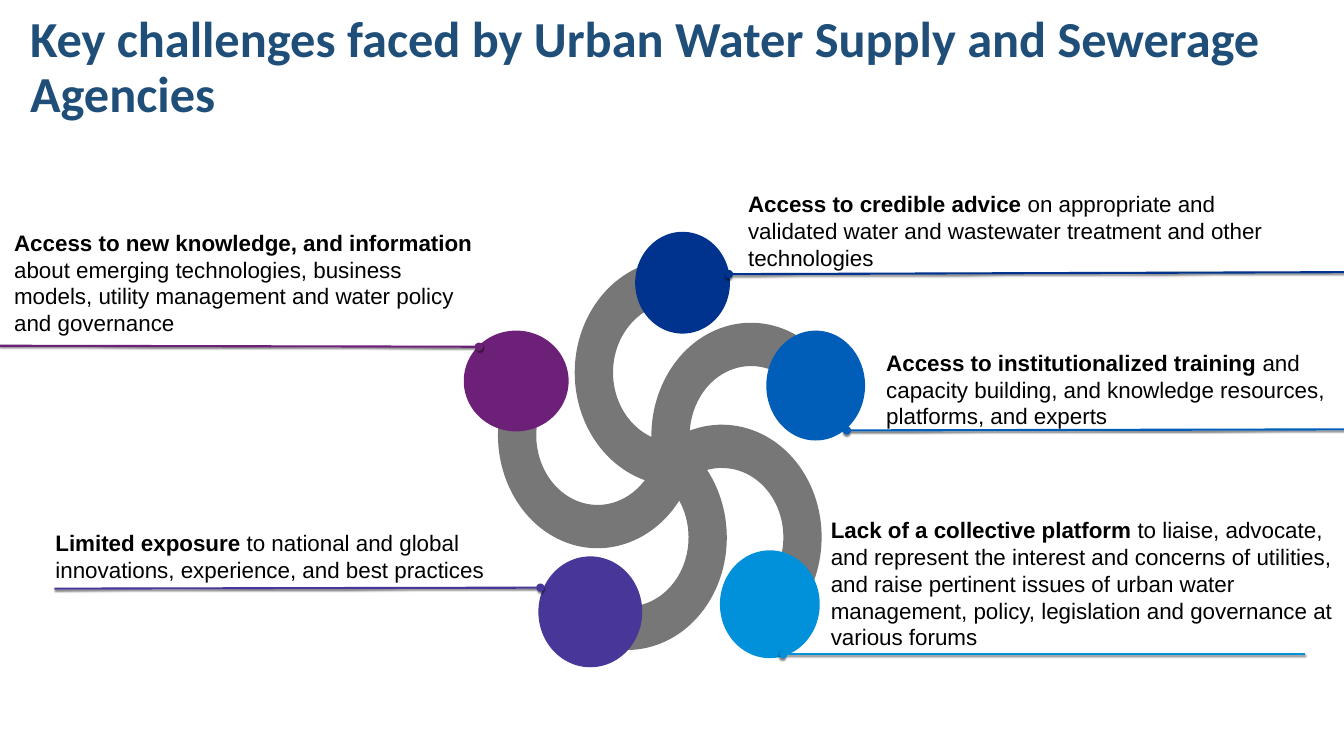
from dataclasses import dataclass
from math import cos, pi, sin

from lxml.etree import SubElement
from pptx import Presentation
from pptx.dml.color import RGBColor
from pptx.enum.shapes import MSO_CONNECTOR as Connector, MSO_SHAPE as Shape
from pptx.enum.text import MSO_ANCHOR as Anchor, MSO_AUTO_SIZE as AutoSize
from pptx.oxml.ns import qn
from pptx.util import Inches, Pt


@dataclass(frozen=True)
class Theme:
    title_color: str = "1F4E79"
    body_color: str = "000000"
    arm_color: str = "777777"
    navy: str = "00338D"
    blue: str = "005EB8"
    sky: str = "0091DA"
    indigo: str = "483698"
    purple: str = "6D2077"
    title_font: str = "Calibri"
    body_font: str = "Arial"
    title_size: int = 36
    body_size: int = 16
    rule_width: float = 1.5


THEME = Theme()

TITLE = "Key challenges faced by Urban Water Supply and Sewerage Agencies"

HUB = (6.69, 4.6)
STRETCH = 1.13
ARM_RADIUS = 0.8
ARM_HALF_WIDTH = 0.19
ARM_COUNT = 5
CURVE = 0.55
HALF_RING = [(0, 1), (-CURVE, 1), (-1, CURVE), (-1, 0),
             (-1, -CURVE), (-CURVE, -1), (0, -1)]

# color, disc box, rule start, rule end, text box, heading, detail
CHALLENGES = [
    (THEME.navy, (6.3, 2.3, 0.94, 1.01), (13.33, 2.7), (7.23, 2.72),
     (7.23, 1.89, 5.66, 0.81), "Access to credible advice ",
     "on appropriate and validated water and wastewater treatment "
     "and other technologies"),
    (THEME.blue, (7.6, 3.28, 0.98, 1.09), (13.33, 4.26), (8.4, 4.27),
     (8.6, 3.46, 4.56, 0.81), "Access to institutionalized training ",
     "and capacity building, and knowledge resources, platforms, "
     "and experts"),
    (THEME.sky, (7.14, 5.46, 0.99, 1.07), (12.94, 6.49), (7.77, 6.49),
     (8.05, 5.12, 5.23, 1.35), "Lack of a collective platform",
     " to liaise, advocate, and represent the interest and concerns of "
     "utilities, and raise pertinent issues of urban water management, "
     "policy, legislation and governance at various forums"),
    (THEME.indigo, (5.34, 5.52, 1.03, 1.1), (0.54, 5.84), (5.36, 5.83),
     (0.36, 5.25, 4.73, 0.54), "Limited exposure ",
     "to national and global innovations, experience, "
     "and best practices"),
    (THEME.purple, (4.6, 3.28, 1.04, 1.0), (0, 3.43), (4.75, 3.44),
     (-0.05, 2.27, 4.85, 1.1), "Access to new knowledge, and information ",
     "about emerging technologies, business models, utility management "
     "and water policy and governance"),
]


def inches(values):
    return [Inches(value) for value in values]


def paint(shape, color):
    shape.shadow.inherit = False
    shape.fill.solid()
    shape.fill.fore_color.rgb = RGBColor.from_string(color)
    shape.line.fill.background()


def add_disc(slide, box, color):
    paint(slide.shapes.add_shape(Shape.OVAL, *inches(box)), color)


def ring_points(radius, turn):
    points = []
    for across, down in HALF_RING:
        x, y = radius * across, radius * down - ARM_RADIUS
        points.append(inches((
            HUB[0] + x * cos(turn) - y * sin(turn),
            HUB[1] + STRETCH * (x * sin(turn) + y * cos(turn)))))
    return points


def bend(segments):
    first, *others = segments
    curve = first.makeelement(qn("a:cubicBezTo"))
    first.addprevious(curve)
    for segment in (first, *others):
        curve.append(segment[0])
        segment.getparent().remove(segment)


def add_arm(slide, turn):
    outer = ring_points(ARM_RADIUS + ARM_HALF_WIDTH, turn)
    inner = ring_points(ARM_RADIUS - ARM_HALF_WIDTH, turn)
    start, *rest = outer + inner[::-1]
    outline = slide.shapes.build_freeform(*start)
    outline.add_line_segments(rest, close=True)
    arm = outline.convert_to_shape()
    segments = list(arm.element.iter(qn("a:lnTo")))
    for first in (0, 3, 7, 10):
        bend(segments[first:first + 3])
    paint(arm, THEME.arm_color)


def add_rule(slide, start, end, color):
    rule = slide.shapes.add_connector(
        Connector.STRAIGHT, *inches(start), *inches(end))
    rule.line.width = Pt(THEME.rule_width)
    rule.line.color.rgb = RGBColor.from_string(color)
    properties = rule.element.spPr
    SubElement(properties.find(qn("a:ln")), qn("a:tailEnd"), type="oval")
    effects = SubElement(properties, qn("a:effectLst"))
    shadow = SubElement(effects, qn("a:outerShdw"), blurRad=str(Pt(1)),
                        dist=str(Pt(1)), dir="5400000", rotWithShape="0")
    black = SubElement(shadow, qn("a:srgbClr"), val="000000")
    SubElement(black, qn("a:alpha"), val="50000")


def add_text(slide, box, runs, frame_format, font_format, color, spacing=None):
    frame = slide.shapes.add_textbox(*inches(box)).text_frame
    for name, value in frame_format.items():
        setattr(frame, name, value)
    paragraph = frame.paragraphs[0]
    paragraph.line_spacing = spacing
    for words, bold in runs:
        run = paragraph.add_run()
        run.text = words
        for name, value in {**font_format, "bold": bold}.items():
            setattr(run.font, name, value)
        run.font.color.rgb = RGBColor.from_string(color)


def add_title(slide):
    add_text(slide, (0.2, 0.16, 13.01, 1.04), [(TITLE, True)],
             {"word_wrap": True, "vertical_anchor": Anchor.MIDDLE},
             {"name": THEME.title_font, "size": Pt(THEME.title_size)},
             THEME.title_color, spacing=0.9)


def add_challenge_text(slide, box, heading, detail):
    add_text(slide, box, [(heading, True), (detail, False)],
             {"word_wrap": True, "auto_size": AutoSize.SHAPE_TO_FIT_TEXT,
              "margin_left": Inches(0.19), "margin_top": 0,
              "margin_right": 0, "margin_bottom": 0},
             {"name": THEME.body_font, "size": Pt(THEME.body_size)},
             THEME.body_color)


def main():
    deck = Presentation()
    deck.slide_width, deck.slide_height = inches((13.33, 7.5))
    slide = deck.slides.add_slide(deck.slide_layouts[6])
    add_title(slide)
    for arm in range(ARM_COUNT):
        add_arm(slide, 2 * pi * arm / ARM_COUNT)
    add_disc(slide, (6.38, 4.26, 0.6, 0.67), THEME.arm_color)
    for color, disc, start, end, box, heading, detail in CHALLENGES:
        add_disc(slide, disc, color)
        add_rule(slide, start, end, color)
        add_challenge_text(slide, box, heading, detail)
    deck.save("out.pptx")


if __name__ == "__main__":
    main()
